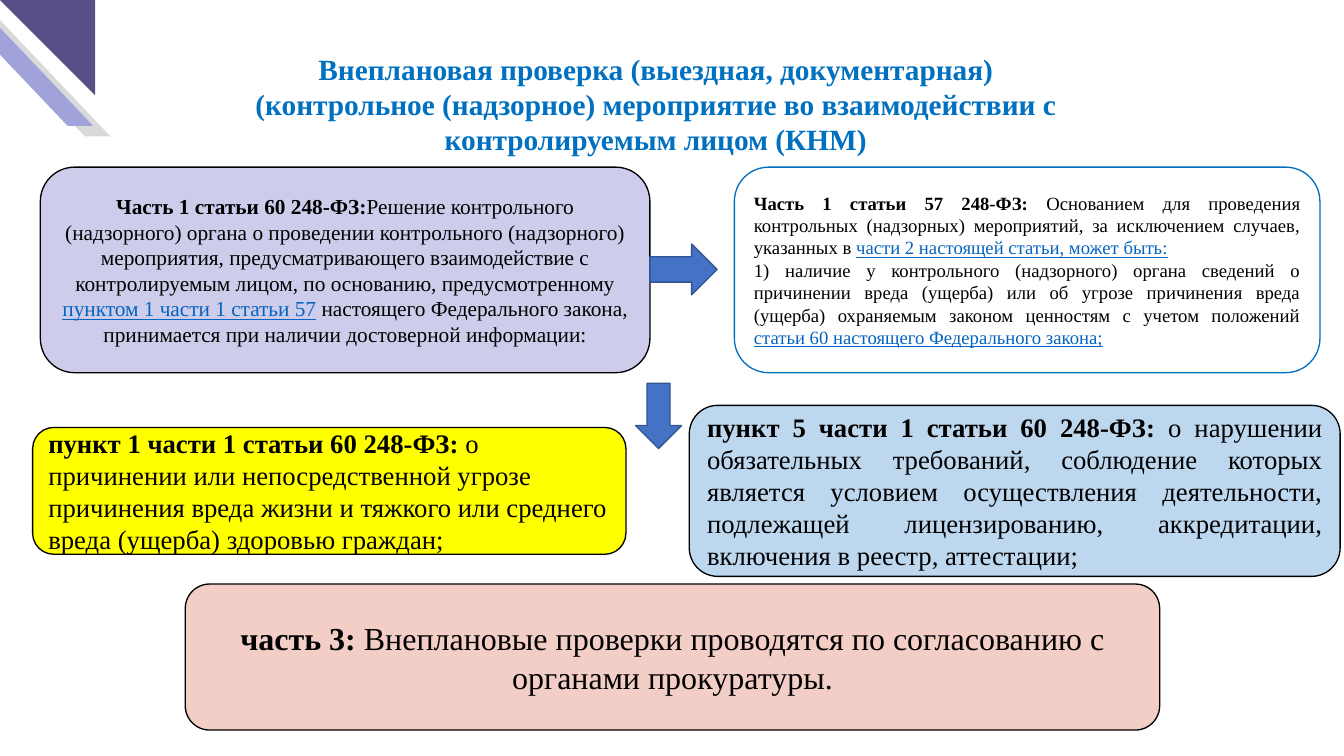
from dataclasses import dataclass
from typing import NamedTuple, Optional

from pptx import Presentation
from pptx.dml.color import RGBColor
from pptx.enum.shapes import MSO_SHAPE
from pptx.enum.text import MSO_ANCHOR, PP_ALIGN
from pptx.util import Inches, Pt

ROUND, SLANT = MSO_SHAPE.ROUNDED_RECTANGLE, MSO_SHAPE.PARALLELOGRAM
WEDGE = MSO_SHAPE.RIGHT_TRIANGLE
DOWN, RIGHT = MSO_SHAPE.DOWN_ARROW, MSO_SHAPE.RIGHT_ARROW
LEFT, MID, FULL = PP_ALIGN.LEFT, PP_ALIGN.CENTER, PP_ALIGN.JUSTIFY
CENTER = MSO_ANCHOR.MIDDLE

BLACK = RGBColor(0x00, 0x00, 0x00)
WHITE = RGBColor(0xFF, 0xFF, 0xFF)
GREY = RGBColor(0xD9, 0xD9, 0xD9)
LILAC = RGBColor(0xA2, 0xA2, 0xDA)
PLUM = RGBColor(0x56, 0x50, 0x87)
BLUE = RGBColor(0x00, 0x70, 0xC0)
LINK = RGBColor(0x05, 0x63, 0xC1)
MAUVE = RGBColor(0xCD, 0xCD, 0xEB)
YELLOW = RGBColor(0xFF, 0xFF, 0x00)
SKY = RGBColor(0xBD, 0xD7, 0xEE)
PINK = RGBColor(0xF2, 0xCE, 0xC6)
ROYAL = RGBColor(0x44, 0x72, 0xC4)
NAVY = RGBColor(0x32, 0x54, 0x91)

FONT = "Times New Roman"
CELL = Inches(0.1)  # the grid has 140 columns
COLS, ROWS = 140, 78.7


class Area(NamedTuple):
    col: float
    row: float
    wide: float
    high: float


class Piece(NamedTuple):
    text: str
    bold: bool = False
    color: RGBColor = BLACK
    under: bool = False


@dataclass
class Card:
    area: Area
    fill: RGBColor
    size: int
    align: PP_ALIGN
    paras: list[list[Piece]]
    line: RGBColor = BLACK


def bold(text: str, color: RGBColor = BLACK) -> Piece:
    return Piece(text, True, color)


def link(text: str) -> Piece:
    return Piece(text, False, LINK, True)


def place(area: Area) -> list[int]:
    return [round(n * CELL) for n in area]


def draw(slide, kind: MSO_SHAPE, area: Area, fill: RGBColor,
         line: Optional[RGBColor] = None, flip: str = ""):
    shape = slide.shapes.add_shape(kind, *place(area))
    shape.shadow.inherit = False
    shape.fill.solid()
    shape.fill.fore_color.rgb = fill
    if line is None:
        shape.line.fill.background()
    else:
        shape.line.color.rgb = line
        shape.line.width = Pt(1)
    for axis in flip:
        shape.element.spPr.xfrm.set("flip" + axis, "1")
    return shape


def write(frame, paras: list[list[Piece]], size: int, align: PP_ALIGN) -> None:
    frame.word_wrap = True
    for i, para in enumerate(paras):
        p = frame.add_paragraph() if i else frame.paragraphs[0]
        p.alignment = align
        for piece in para:
            run = p.add_run()
            run.text = piece.text
            font = run.font
            font.name, font.size = FONT, Pt(size)
            font.bold, font.underline = piece.bold, piece.under
            font.color.rgb = piece.color


def add_card(slide, card: Card) -> None:
    shape = draw(slide, ROUND, card.area, card.fill, card.line)
    shape.text_frame.vertical_anchor = CENTER
    write(shape.text_frame, card.paras, card.size, card.align)


TITLE = [
    [bold("Внеплановая проверка (выездная, документарная)", BLUE)],
    [bold("(контрольное (надзорное) мероприятие во взаимодействии с "
          "контролируемым лицом (КНМ)", BLUE)],
]

CARDS = [
    Card(Area(4.2, 17.4, 63.5, 21.4), MAUVE, 16, MID, [[
        bold("Часть 1 статьи 60 248-ФЗ:"),
        Piece("Решение контрольного (надзорного) органа о проведении "
              "контрольного (надзорного) мероприятия, предусматривающего "
              "взаимодействие с контролируемым лицом, по основанию, "
              "предусмотренному "),
        link("пунктом 1 части 1 статьи 57"),
        Piece(" настоящего Федерального закона, принимается при наличии "
              "достоверной информации:"),
    ]]),
    Card(Area(3.4, 44.5, 61.8, 13.2), YELLOW, 20, LEFT, [[
        bold("пункт 1 части 1 статьи 60 248-ФЗ: "),
        Piece("о причинении или непосредственной угрозе причинения вреда "
              "жизни и тяжкого или среднего вреда (ущерба) здоровью граждан;"),
    ]]),
    Card(Area(71.8, 42.2, 67.8, 17.8), SKY, 20, FULL, [[
        bold("пункт 5 части 1 статьи 60 248-ФЗ: "),
        Piece("о нарушении обязательных требований, соблюдение которых "
              "является условием осуществления деятельности, подлежащей "
              "лицензированию, аккредитации, включения в реестр, аттестации;"),
    ]]),
    Card(Area(19.3, 60.8, 101.5, 15.2), PINK, 24, MID, [[
        bold("часть 3:"),
        Piece(" Внеплановые проверки проводятся по согласованию с "
              "органами прокуратуры."),
    ]]),
    Card(Area(76.5, 17.4, 61, 21.4), WHITE, 14, FULL, [
        [bold("Часть 1 статьи 57 248-ФЗ: "),
         Piece("Основанием для проведения контрольных (надзорных) "
               "мероприятий, за исключением случаев, указанных в "),
         link("части 2 настоящей статьи, может быть:")],
        [Piece("1) наличие у контрольного (надзорного) органа сведений о "
               "причинении вреда (ущерба) или об угрозе причинения вреда "
               "(ущерба) охраняемым законом ценностям с учетом положений "),
         link("статьи 60 настоящего Федерального закона;")],
    ], BLUE),
]

ARROWS = [
    (DOWN, Area(66.2, 39.9, 4.8, 6.8)),
    (RIGHT, Area(67.7, 25.4, 7, 5.3)),
]


def main() -> None:
    deck = Presentation()
    deck.slide_width, deck.slide_height = COLS * CELL, round(ROWS * CELL)
    slide = deck.slides.add_slide(deck.slide_layouts[6])

    # Corner ornament
    for col, row, fill in ((-3.6, 1.1, GREY), (-5.4, 0, LILAC)):
        band = draw(slide, SLANT, Area(col, row, 15.1, 13.1), fill, flip="H")
        band.adjustments[0] = 0.95
    draw(slide, WEDGE, Area(0, 0, 9.9, 9.9), PLUM, flip="HV")

    # Title
    title = slide.shapes.add_textbox(*place(Area(14.9, 4.8, 106.8, 25.2)))
    write(title.text_frame, TITLE, 22, MID)

    # Cards and the arrows between them
    for card in CARDS:
        add_card(slide, card)
    for kind, area in ARROWS:
        draw(slide, kind, area, ROYAL, NAVY)

    deck.save("out.pptx")


if __name__ == "__main__":
    main()
